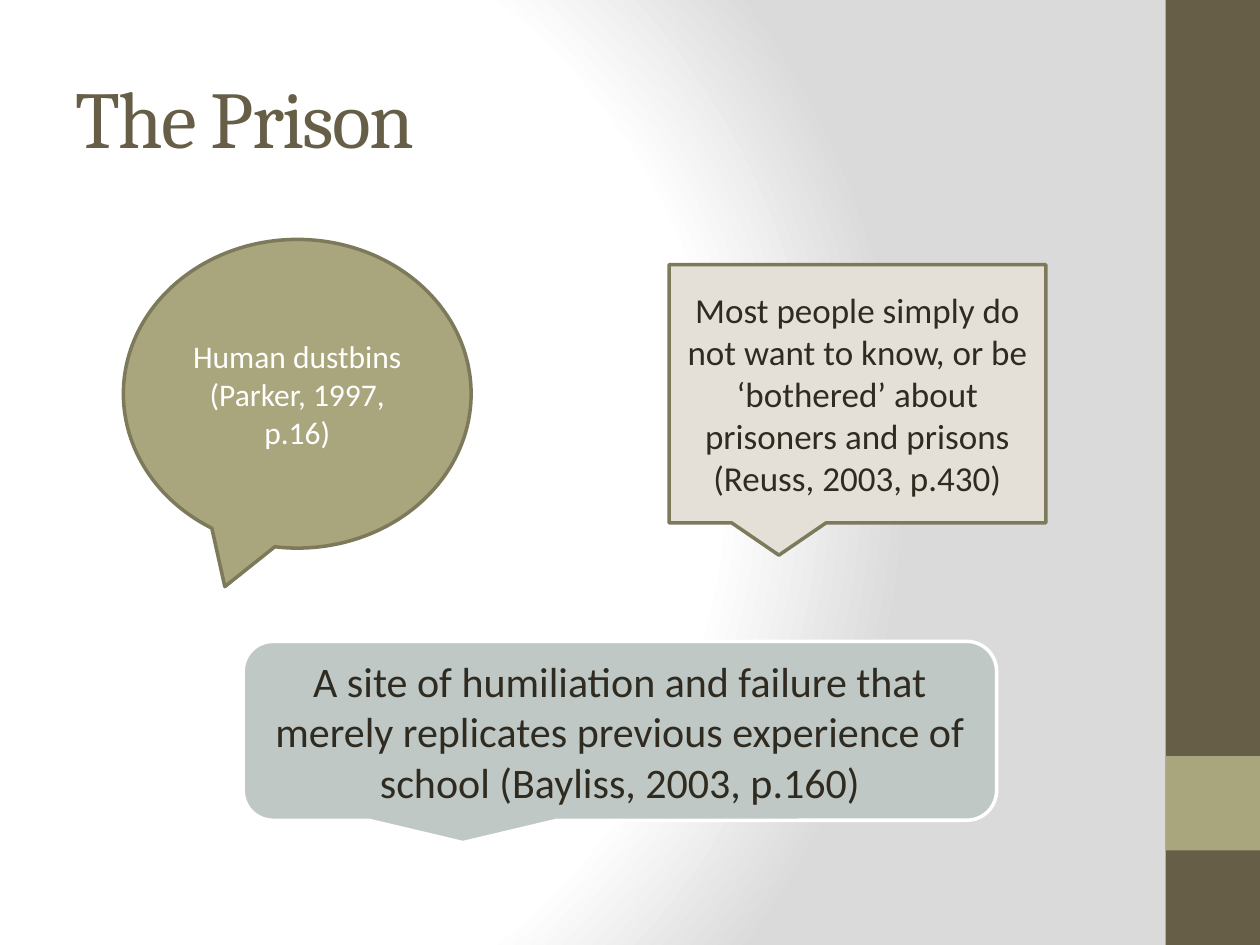
"""Build the slide "The Prison" with three speech callouts and a side band."""
from lxml.etree import SubElement
from pptx import Presentation
from pptx.dml.color import RGBColor
from pptx.enum.shapes import MSO_SHAPE as Preset
from pptx.enum.text import MSO_ANCHOR as Anchor, PP_ALIGN as Align
from pptx.oxml.ns import qn
from pptx.util import Inches, Pt


def color(value):
    return RGBColor.from_string(value)


def write(shape, text, font, size, ink, align):
    frame = shape.text_frame
    frame.word_wrap = True
    frame.vertical_anchor = Anchor.MIDDLE
    para = frame.paragraphs[0]
    para.text = text
    para.alignment = align
    para.font.name = font
    para.font.size = Pt(size)
    para.font.color.rgb = color(ink)
    return para


deck = Presentation()
deck.slide_width, deck.slide_height = Inches(10), Inches(7.5)
page = deck.slides.add_slide(deck.slide_layouts[6])

page.background.fill.gradient()
gradient = page.element.find(".//" + qn("a:gradFill"))
for child in list(gradient):
    gradient.remove(child)
stops = SubElement(gradient, qn("a:gsLst"))
for position, shade in [(0, "FFFFFF"), (75, "FFFFFF"), (100, "DADADA")]:
    stop = SubElement(stops, qn("a:gs"), pos=str(position * 1000))
    SubElement(stop, qn("a:srgbClr"), val=shade)
circle = SubElement(gradient, qn("a:path"), path="circle")
SubElement(circle, qn("a:fillToRect"), l="20000", t="50000", r="100000", b="50000")

for top, height, fill in [(0, 7.5, "675E47"), (6, 0.75, "A9A57C")]:
    band = page.shapes.add_shape(
        Preset.RECTANGLE, Inches(9.25), Inches(top), Inches(0.75), Inches(height))
    band.shadow.inherit = False
    band.fill.solid()
    band.fill.fore_color.rgb = color(fill)
    band.line.fill.background()

title = page.shapes.add_textbox(Inches(0.5), Inches(0.3), Inches(8.33), Inches(1.25))
heading = write(title, "The Prison", "Cambria", 46, "675E47", Align.LEFT)
heading.runs[0].font._element.set("spc", "-100")

callouts = [
    (Preset.OVAL_CALLOUT, (0.98, 1.9, 2.76, 2.45), "A9A57C", "7D7A5C", 18, "FFFFFF",
     "Human dustbins (Parker, 1997, p.16)"),
    (Preset.RECTANGULAR_CALLOUT, (5.31, 2.1, 2.99, 2.05), "E4E0D7", "7D7A5C", 20, "2F2B20",
     "Most people simply do not want to know, or be ‘bothered’ about "
     "prisoners and prisons (Reuss, 2003, p.430)"),
    (Preset.ROUNDED_RECTANGULAR_CALLOUT, (1.93, 5.09, 5.98, 1.42), "BFC8C4", "FFFFFF", 24, "2F2B20",
     "A site of humiliation and failure that merely replicates previous "
     "experience of school (Bayliss, 2003, p.160)"),
]
for preset, place, fill, outline, size, ink, quote in callouts:
    callout = page.shapes.add_shape(preset, *map(Inches, place))
    callout.shadow.inherit = False
    callout.fill.solid()
    callout.fill.fore_color.rgb = color(fill)
    callout.line.color.rgb = color(outline)
    callout.line.width = Pt(2)
    write(callout, quote, "Calibri", size, ink, Align.CENTER)

deck.save("out.pptx")
